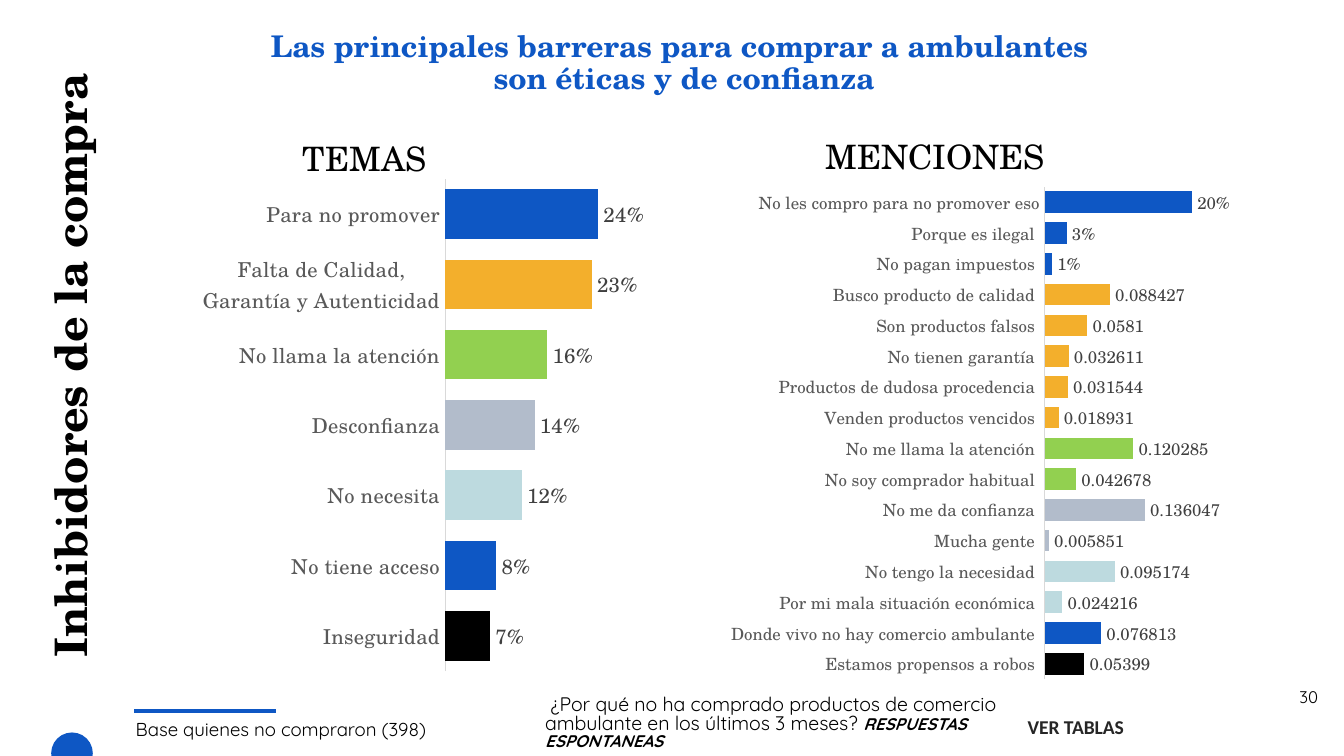
from lxml import etree
from pptx import Presentation
from pptx.chart.data import CategoryChartData
from pptx.dml.color import RGBColor
from pptx.enum.chart import XL_CHART_TYPE as CHART, XL_LABEL_POSITION as LABEL, XL_TICK_MARK as TICK
from pptx.enum.shapes import MSO_CONNECTOR as CONNECTOR, MSO_SHAPE as SHAPE
from pptx.enum.text import MSO_ANCHOR as ANCHOR, MSO_AUTO_SIZE as FIT, PP_ALIGN as ALIGN
from pptx.oxml.ns import qn
from pptx.util import Pt

SERIF, SANS = "TeX Gyre Schola", "Quicksand"
BLUE, AMBER, GREEN, GREY, AQUA, BLACK = "0E57C4", "F3AF2C", "92D050", "B2BCCB", "BDDADF", "000000"

TOPICS = [
    ("Para no promover", 0.24, BLUE),
    ("Falta de Calidad, Garantía y Autenticidad", 0.23, AMBER),
    ("No llama la atención", 0.16, GREEN),
    ("Desconfianza", 0.14, GREY),
    ("No necesita", 0.12, AQUA),
    ("No tiene acceso", 0.08, BLUE),
    ("Inseguridad", 0.07, BLACK),
]

MENTIONS = [
    (BLUE, "0%", [("No les compro para no promover eso", 0.2), ("Porque es ilegal ", 0.03),
                  ("No pagan impuestos ", 0.01)]),
    (AMBER, "General", [("Busco producto de calidad ", 0.088427), ("Son productos falsos ", 0.0581),
                        ("No tienen garantía ", 0.032611),
                        ("Productos de dudosa procedencia ", 0.031544),
                        ("Venden productos vencidos ", 0.018931)]),
    (GREEN, "General", [("No me llama la atención ", 0.120285),
                        ("No soy comprador habitual ", 0.042678)]),
    (GREY, "General", [("No me da confianza ", 0.136047), ("Mucha gente ", 0.005851)]),
    (AQUA, "General", [("No tengo la necesidad ", 0.095174),
                       ("Por mi mala situación económica ", 0.024216)]),
    (BLUE, "General", [("Donde vivo no hay comercio ambulante ", 0.076813)]),
    (BLACK, "General", [("Estamos propensos a robos ", 0.05399)]),
]


def rgb(value):
    return RGBColor.from_string(value)


def pts(*lengths):
    return [Pt(length) for length in lengths]


def style(font, size, color=BLACK, name=SERIF, bold=False, italic=False):
    font.size, font.name = Pt(size), name
    font.bold, font.italic = bold, italic
    font.color.rgb = rgb(color)


def write(tf, text, size, color=BLACK, name=SERIF, bold=False, align=ALIGN.LEFT, spacing=1.0):
    tf.text = text
    for p in tf.paragraphs:
        p.alignment, p.line_spacing = align, spacing
        p.space_before = Pt(0)
        for r in p.runs:
            style(r.font, size, color, name, bold)


def add_text(s, box, text, size, wrap=True, anchor=ANCHOR.TOP, fit=FIT.NONE, **look):
    tf = s.shapes.add_textbox(*pts(*box)).text_frame
    tf.word_wrap, tf.vertical_anchor, tf.auto_size = wrap, anchor, fit
    write(tf, text, size, **look)
    return tf


def place(sp, box, anchor):
    sp.left, sp.top, sp.width, sp.height = pts(*box)
    tf = sp.text_frame
    tf.word_wrap, tf.vertical_anchor, tf.auto_size = True, anchor, FIT.NONE
    return tf


def fill_placeholders(s):
    title, body = s.shapes.title, s.placeholders[1]
    tf = place(title, (-154, 183.6, 386, 24.5), ANCHOR.MIDDLE)
    title.rotation = 270
    write(tf, "Inhibidores de la compra", 24, bold=True, align=ALIGN.CENTER, spacing=0.9)

    tf = place(body, (65.5, 382.5, 363, 19.4), ANCHOR.TOP)
    write(tf, "Base quienes no compraron (398)", 10, name=SANS, spacing=0.9)
    pPr = tf.paragraphs[0]._p.get_or_add_pPr()
    pPr.set("marL", "0")
    pPr.set("indent", "0")
    etree.SubElement(pPr, qn("a:buNone"))


def add_accents(s):
    dot = s.shapes.add_shape(SHAPE.OVAL, *pts(27.4, 392.4, 22.3, 22.3))
    dot.shadow.inherit = False
    dot.fill.solid()
    dot.fill.fore_color.rgb = rgb(BLUE)
    dot.line.fill.background()

    rule = s.shapes.add_connector(CONNECTOR.STRAIGHT, *pts(72, 381, 147.6, 381))
    rule.line.color.rgb = rgb(BLUE)
    rule.line.width = Pt(1.75)
    etree.SubElement(rule._element.spPr, qn("a:effectLst"))


def set_plot_area(chart, x, y, w, h):
    c_chart = chart._chartSpace.find(qn("c:chart"))
    area = c_chart.find(qn("c:plotArea"))
    for old in area.findall(qn("c:layout")):
        area.remove(old)
    layout = etree.Element(qn("c:layout"))
    manual = etree.SubElement(layout, qn("c:manualLayout"))
    for tag, val in (("layoutTarget", "inner"), ("xMode", "edge"), ("yMode", "edge"),
                     ("x", x), ("y", y), ("w", w), ("h", h)):
        etree.SubElement(manual, qn(f"c:{tag}")).set("val", str(val))
    area.insert(0, layout)
    spPr = etree.Element(qn("c:spPr"))
    etree.SubElement(spPr, qn("a:noFill"))
    etree.SubElement(etree.SubElement(spPr, qn("a:ln")), qn("a:noFill"))
    c_chart.addnext(spPr)


def add_bars(s, box, data, series_looks, size, maximum, plot_box, overlap=0):
    chart = s.shapes.add_chart(CHART.BAR_CLUSTERED, *pts(*box), data).chart
    chart.has_legend = chart.has_title = False
    set_plot_area(chart, *plot_box)
    style(chart.font, size)

    cats, vals = chart.category_axis, chart.value_axis
    cats.reverse_order = True
    cats.major_tick_mark = cats.minor_tick_mark = TICK.NONE
    cats.format.line.color.rgb = rgb("D9D9D9")
    cats.format.line.width = Pt(0.75)
    style(cats.tick_labels.font, size, "595959")
    vals.visible = vals.has_major_gridlines = False
    vals.minimum_scale, vals.maximum_scale = 0, maximum
    vals.tick_labels.number_format = "0%"
    vals.tick_labels.number_format_is_linked = False

    plot = chart.plots[0]
    plot.gap_width, plot.overlap, plot.vary_by_categories = 42, overlap, False
    for series, (color, fmt) in zip(plot.series, series_looks):
        series.invert_if_negative = False
        series.format.fill.solid()
        series.format.fill.fore_color.rgb = rgb(color)
        labels = series.data_labels
        labels.show_value, labels.position = True, LABEL.OUTSIDE_END
        labels.number_format, labels.number_format_is_linked = fmt, False
        style(labels.font, size, "404040")
    return plot


def add_topics(s):
    data = CategoryChartData()
    data.categories = [name for name, _, _ in TOPICS]
    data.add_series("Series 1", [value for _, value, _ in TOPICS], "0%")
    plot = add_bars(s, (101.5, 84.7, 274.3, 285.8), data, [(BLUE, "0%")], 11, 0.3,
                    (0.5, 0.039, 0.373, 0.923))
    for i, (_, _, color) in enumerate(TOPICS):
        fill = plot.series[0].points[i].format.fill
        fill.solid()
        fill.fore_color.rgb = rgb(color)


def add_mentions(s):
    data = CategoryChartData()
    data.categories = [name for _, _, items in MENTIONS for name, _ in items]
    for i, (_, fmt, group) in enumerate(MENTIONS):
        values = [value if items is group else None for _, _, items in MENTIONS for _, value in items]
        data.add_series(f"Series {i + 1}", values, fmt)
    looks = [(color, fmt) for color, fmt, _ in MENTIONS]
    add_bars(s, (339.5, 89, 350, 285.8), data, looks, 9, 0.25,
             (0.629, 0.039, 0.282, 0.923), overlap=100)


def main():
    prs = Presentation()
    prs.slide_width, prs.slide_height = pts(720, 405)
    s = prs.slides.add_slide(prs.slide_layouts[1])
    add_accents(s)
    fill_placeholders(s)
    add_text(s, (65.5, 11.5, 602, 45.4),
             "Las principales barreras para comprar a ambulantes \nson éticas y de confianza", 16,
             anchor=ANCHOR.MIDDLE, color=BLUE, bold=True, align=ALIGN.CENTER, spacing=0.9)
    add_text(s, (689, 364.3, 26, 25.2), "30", 9, name=SANS)
    add_topics(s)
    add_mentions(s)
    for text, box in (("TEMAS", (144.9, 70.2, 90.7, 28.8)), ("MENCIONES", (414.4, 69.3, 152.6, 28.8))):
        add_text(s, box, text, 18, fit=FIT.SHAPE_TO_FIT_TEXT, align=ALIGN.RIGHT)
    tf = add_text(s, (285, 369.8, 276.5, 39.6),
                  " ¿Por qué no ha comprado productos de comercio ambulante en los últimos 3 meses? ",
                  10.5, name=SANS, spacing=0.8)
    r = tf.paragraphs[0].add_run()
    r.text = "RESPUESTAS ESPONTANEAS"
    style(r.font, 9, name=SANS, bold=True, italic=True)
    add_text(s, (543.4, 379.4, 70.6, 20.9), "VER TABLAS", 10.5, wrap=False,
             fit=FIT.SHAPE_TO_FIT_TEXT, color="262626", name="Calibri", bold=True)
    prs.save("out.pptx")


if __name__ == "__main__":
    main()
